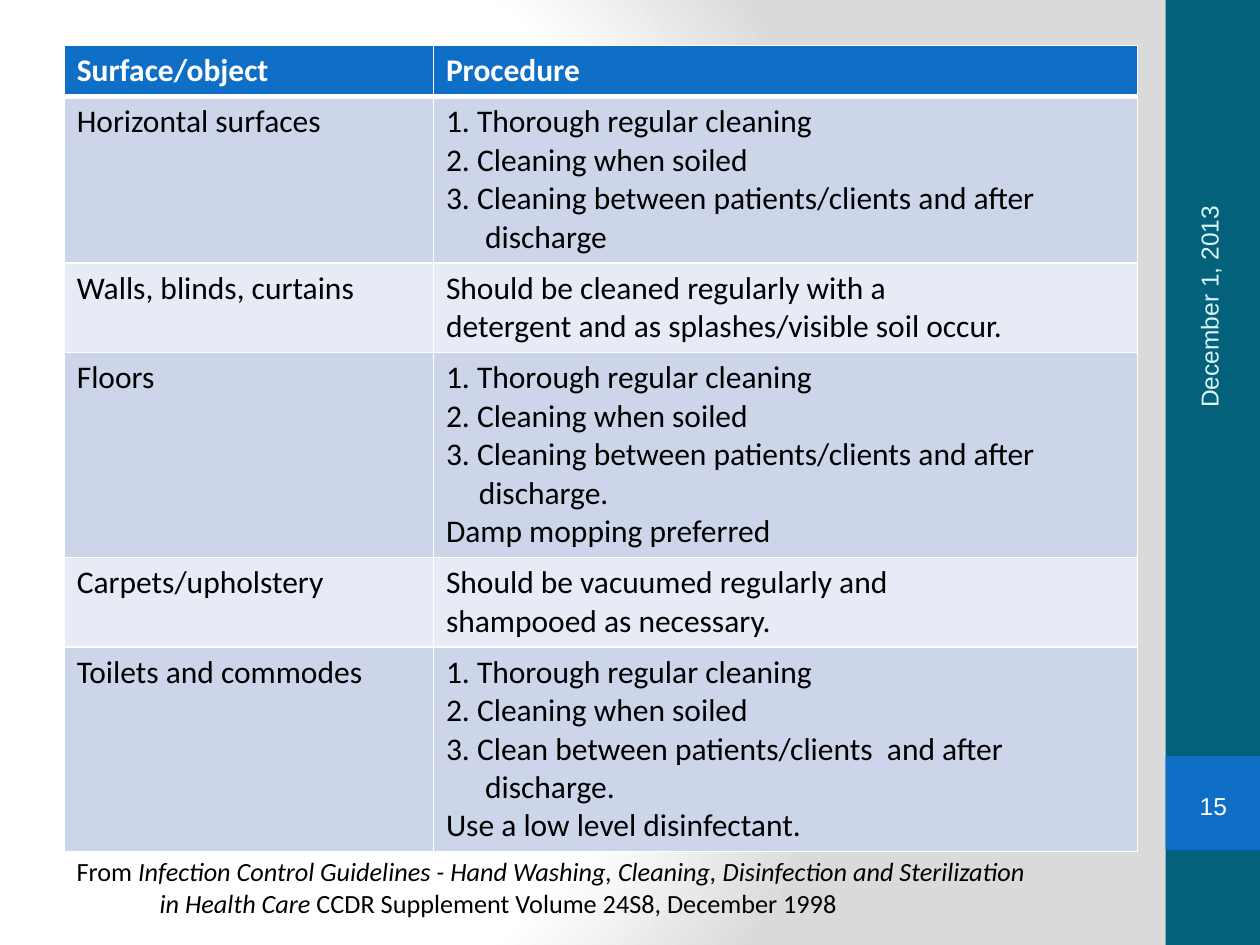
import pptx
import pptx.util
import pptx.dml.color
import pptx.enum.shapes
import pptx.enum.text
import pptx.oxml
import pptx.oxml.ns
from pptx.util import Inches


def color(value):
    return pptx.dml.color.RGBColor.from_string(value)


def write(para, text, **look):
    span = para.add_run()
    span.text = text
    values = {"name": "Calibri", "size": 18, "bold": False, "italic": False, "color": "000000"}
    values.update(look)
    span.font.color.rgb = color(values.pop("color"))
    values["size"] = pptx.util.Pt(values["size"])
    for key, value in values.items():
        setattr(span.font, key, value)


deck = pptx.Presentation()
deck.slide_width, deck.slide_height = Inches(10), Inches(7.5)
page = deck.slides.add_slide(deck.slide_layouts[6])
namespace = pptx.oxml.ns.nsdecls("a")

# Background: radial gradient from white to grey
page.background.fill.gradient()
gradient = page.element.xpath(".//p:bgPr/a:gradFill")[0]
stops = "".join(
    f'<a:gs pos="{position * 1000}"><a:srgbClr val="{value}"/></a:gs>'
    for position, value in [(0, "FFFFFF"), (75, "FFFFFF"), (100, "DADADA")])
gradient.getparent().replace(gradient, pptx.oxml.parse_xml(
    f'<a:gradFill {namespace} rotWithShape="1"><a:gsLst>{stops}</a:gsLst>'
    '<a:path path="circle"><a:fillToRect l="20000" t="50000" r="100000" b="50000"/></a:path>'
    '</a:gradFill>'))

# Side band and page number block
for top, height, fill in [(0, 7.5, "04617B"), (6, 0.75, "0F6FC6")]:
    band = page.shapes.add_shape(pptx.enum.shapes.MSO_SHAPE.RECTANGLE,
                                 Inches(9.25), Inches(top), Inches(0.75), Inches(height))
    band.shadow.inherit = False
    band.fill.solid()
    band.fill.fore_color.rgb = color(fill)
    band.line.fill.background()

# Cleaning procedures: surface, lines of procedure, hanging indent of numbered lines
steps = ["1. Thorough regular cleaning", "2. Cleaning when soiled"]
rows = [
    ("Surface/object", ["Procedure"], 0),
    ("Horizontal surfaces",
     steps + ["3. Cleaning between patients/clients and after discharge"], 0.31),
    ("Walls, blinds, curtains",
     ["Should be cleaned regularly with a", "detergent and as splashes/visible soil occur."], 0),
    ("Floors",
     steps + ["3. Cleaning between patients/clients and after discharge.",
              "Damp mopping preferred"], 0.26),
    ("Carpets/upholstery",
     ["Should be vacuumed regularly and", "shampooed as necessary."], 0),
    ("Toilets and commodes",
     steps + ["3. Clean between patients/clients  and after discharge.",
              "Use a low level disinfectant."], 0.31),
]
table = page.shapes.add_table(len(rows), 2, Inches(0.51), Inches(0.36),
                              Inches(8.52), Inches(6.31)).table
for column, width in zip(table.columns, [2.93, 5.59]):
    column.width = Inches(width)

for index, (surface, procedure, indent) in enumerate(rows):
    header = index == 0
    # The third numbered step wraps onto one more line
    line_count = len(procedure) + (1 if indent else 0)
    table.rows[index].height = Inches(0.1 + 0.305 * line_count)
    fill = "0F6FC6" if header else ("CCD5EA" if index % 2 else "E7EBF5")
    for cell, lines in zip(table.rows[index].cells, [[surface], procedure]):
        for number, line in enumerate(lines):
            para = cell.text_frame.paragraphs[0] if number == 0 else cell.text_frame.add_paragraph()
            if indent and line[0].isdigit():
                properties = para._p.get_or_add_pPr()
                properties.set("marL", str(Inches(indent)))
                properties.set("indent", str(-Inches(indent)))
            write(para, line, bold=header, color="FFFFFF" if header else "000000")
        # White borders, thicker under the header
        cell_properties = cell._tc.get_or_add_tcPr()
        for side in "LRTB":
            thick = (index, side) in [(0, "B"), (1, "T")]
            cell_properties.append(pptx.oxml.parse_xml(
                f'<a:ln{side} {namespace} w="{pptx.util.Pt(3 if thick else 1)}"><a:solidFill>'
                f'<a:srgbClr val="FFFFFF"/></a:solidFill></a:ln{side}>'))
        cell.fill.solid()
        cell.fill.fore_color.rgb = color(fill)

# Date, turned to read upwards
date_box = page.shapes.add_textbox(Inches(8.26), Inches(1.8), Inches(2.67), Inches(0.4))
date_box.rotation = 270
date_box.text_frame.word_wrap = True
date_box.text_frame.vertical_anchor = pptx.enum.text.MSO_ANCHOR.MIDDLE
write(date_box.text_frame.paragraphs[0], "December 1, 2013", name="Arial", size=14, color="DBF5F9")

# Page number
number_box = page.shapes.add_shape(pptx.enum.shapes.MSO_SHAPE.DOUBLE_BRACKET,
                                   Inches(9.33), Inches(6.18), Inches(0.6), Inches(0.43))
number_box.adjustments[0] = 0.18
number_box.shadow.inherit = False
number_box.fill.background()
number_box.line.fill.background()
frame = number_box.text_frame
for side in ["left", "top", "right", "bottom"]:
    setattr(frame, f"margin_{side}", 0)
frame.vertical_anchor = pptx.enum.text.MSO_ANCHOR.MIDDLE
frame.paragraphs[0].alignment = pptx.enum.text.PP_ALIGN.CENTER
write(frame.paragraphs[0], "15", name="Arial", size=14, color="FFFFFF")

# Source line with a hanging indent
source_box = page.shapes.add_textbox(Inches(0.51), Inches(6.74), Inches(7.87), Inches(0.61))
source_box.text_frame.word_wrap = True
para = source_box.text_frame.paragraphs[0]
properties = para._p.get_or_add_pPr()
properties.set("marL", str(Inches(0.66)))
properties.set("indent", str(-Inches(0.66)))
for text, italic in [
    ("From ", False),
    ("Infection Control Guidelines - Hand Washing, Cleaning, Disinfection and Sterilization "
     "in Health Care ", True),
    ("CCDR Supplement Volume 24S8, December 1998", False),
]:
    write(para, text, size=15, italic=italic)

deck.save("out.pptx")
